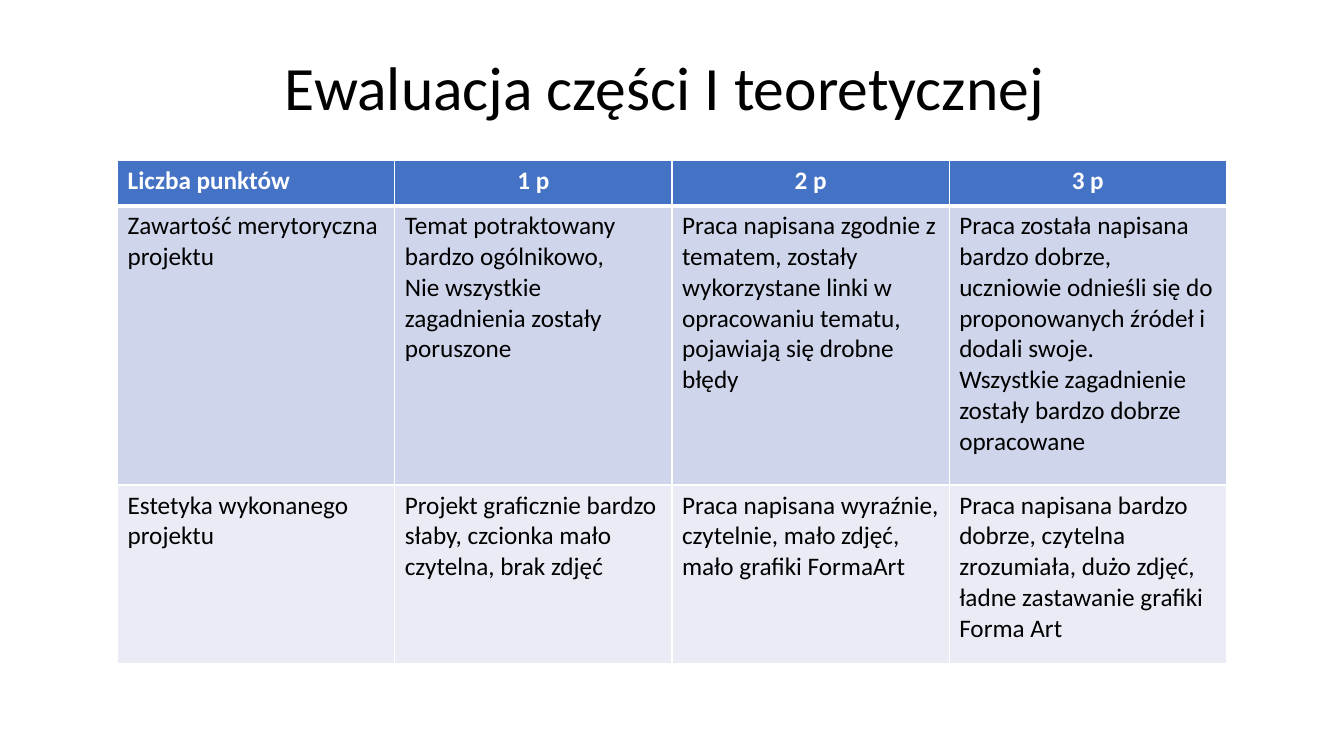
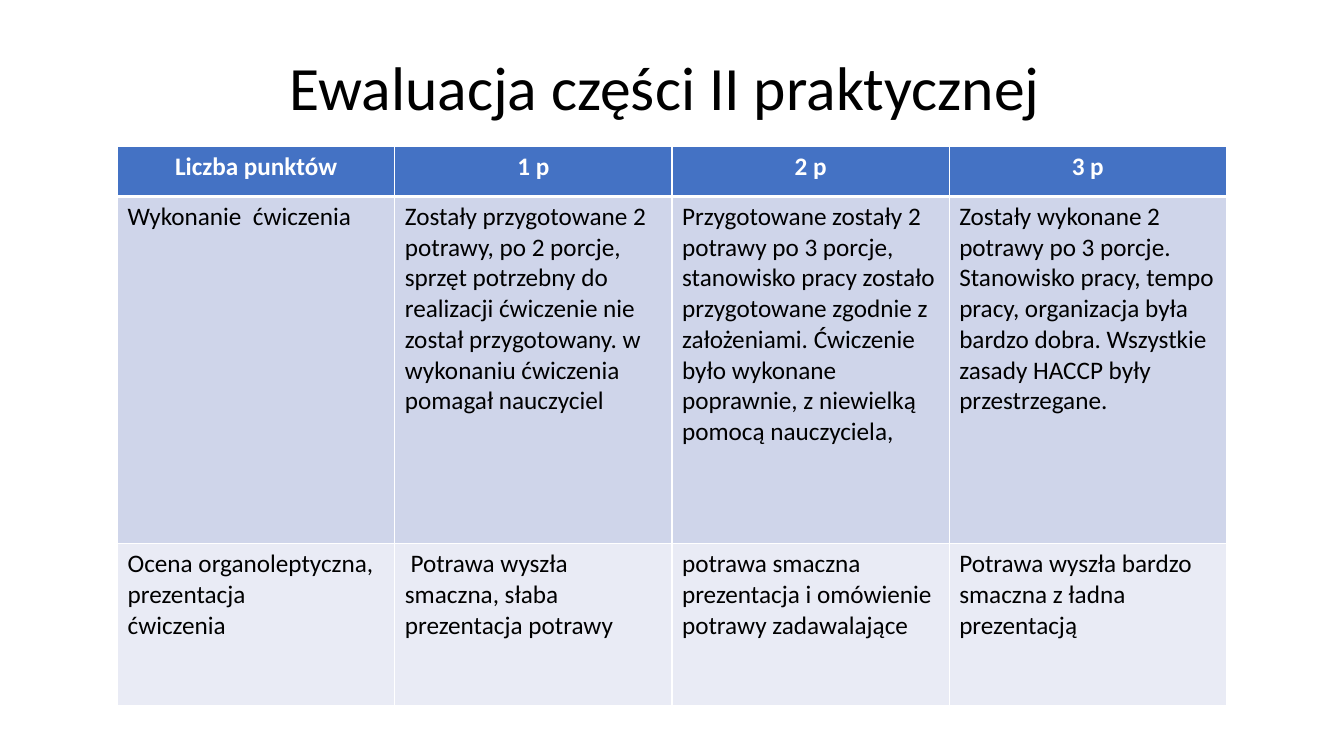
from lxml.etree import SubElement
from pptx import Presentation
from pptx.dml.color import RGBColor
from pptx.enum.text import MSO_ANCHOR, MSO_AUTO_SIZE, PP_ALIGN
from pptx.oxml.ns import qn
from pptx.util import Emu, Pt

EMU_PER_PX = 9525
FONT = "Calibri"
WHITE = RGBColor(0xFF, 0xFF, 0xFF)
BLACK = RGBColor(0, 0, 0)
HEADER_BLUE = RGBColor(0x44, 0x72, 0xC4)
ROW_FILLS = (HEADER_BLUE, RGBColor(0xCF, 0xD5, 0xEA), RGBColor(0xE9, 0xEB, 0xF5))
THIN, THICK = Pt(1), Pt(3)

LEFT, WIDTH = 112, 1056
TITLE_BOX = (LEFT, 48, WIDTH, 76)
POINTS = ("1 p", "2 p", "3 p")

EVALUATIONS = (
    {
        "title": "Ewaluacja części I teoretycznej ",
        "top": 153,
        "heights": (43, 266, 170),
        "corner_align": PP_ALIGN.LEFT,
        "criteria": (
            (
                "Zawartość merytoryczna projektu",
                "Temat potraktowany bardzo ogólnikowo,\n"
                "Nie wszystkie zagadnienia zostały poruszone",
                "Praca napisana zgodnie z tematem, zostały wykorzystane linki "
                "w opracowaniu tematu, pojawiają się drobne błędy",
                "Praca została napisana bardzo dobrze, uczniowie odnieśli się do "
                "proponowanych źródeł i dodali swoje.\n"
                "Wszystkie zagadnienie zostały bardzo dobrze opracowane",
            ),
            (
                "Estetyka wykonanego projektu",
                "Projekt graficznie bardzo słaby, czcionka mało czytelna, brak zdjęć",
                "Praca napisana wyraźnie, czytelnie, mało zdjęć, mało grafiki FormaArt",
                "Praca napisana bardzo dobrze, czytelna zrozumiała, dużo zdjęć, "
                "ładne zastawanie grafiki Forma Art",
            ),
        ),
    },
    {
        "title": "Ewaluacja części II praktycznej ",
        "top": 139,
        "heights": (48, 331, 154),
        "corner_align": PP_ALIGN.CENTER,
        "criteria": (
            (
                "Wykonanie  ćwiczenia",
                "Zostały przygotowane 2 potrawy, po 2 porcje, sprzęt potrzebny do "
                "realizacji ćwiczenie nie został przygotowany. w wykonaniu "
                "ćwiczenia pomagał nauczyciel",
                "Przygotowane zostały 2 potrawy po 3 porcje, stanowisko pracy zostało "
                "przygotowane zgodnie z założeniami. Ćwiczenie było wykonane "
                "poprawnie, z niewielką pomocą nauczyciela,",
                "Zostały wykonane 2 potrawy po 3 porcje. Stanowisko pracy, tempo "
                "pracy, organizacja była bardzo dobra. Wszystkie zasady HACCP "
                "były przestrzegane.",
            ),
            (
                "Ocena organoleptyczna,\nprezentacja\nćwiczenia",
                " Potrawa wyszła smaczna, słaba prezentacja potrawy",
                "potrawa smaczna prezentacja i omówienie potrawy zadawalające",
                "Potrawa wyszła bardzo smaczna z ładna prezentacją",
            ),
        ),
    },
)


def px(length):
    """Turn pixels into EMU."""
    return Emu(length * EMU_PER_PX)


def style_text(frame, size, color, align, bold=False):
    """Format every paragraph and run of a text frame."""
    for paragraph in frame.paragraphs:
        paragraph.alignment = align
        for run in paragraph.runs:
            run.font.name = FONT
            run.font.size = Pt(size)
            run.font.bold = bold
            run.font.color.rgb = color


def set_borders(cell, top, bottom):
    """Draw white cell borders ahead of the cell fill."""
    properties = cell._tc.get_or_add_tcPr()
    sides = (("lnL", THIN), ("lnR", THIN), ("lnT", top), ("lnB", bottom))
    for position, (side, weight) in enumerate(sides):
        border = SubElement(properties, qn(f"a:{side}"), w=str(int(weight)))
        fill = SubElement(border, qn("a:solidFill"))
        SubElement(fill, qn("a:srgbClr"), val=str(WHITE))
        properties.insert(position, border)


def add_title(slide, text, box):
    """Place and format the slide title."""
    title = slide.shapes.title
    title.left, title.top, title.width, title.height = map(px, box)
    frame = title.text_frame
    frame.text = text
    frame.word_wrap = True
    frame.auto_size = MSO_AUTO_SIZE.NONE
    frame.vertical_anchor = MSO_ANCHOR.MIDDLE
    frame.paragraphs[0].line_spacing = 0.9
    style_text(frame, 44, BLACK, PP_ALIGN.CENTER)


def add_rubric(slide, rows, heights, corner_align, box):
    """Place the scoring table with equal columns."""
    columns = len(rows[0])
    rubric = slide.shapes.add_table(len(rows), columns, *map(px, box)).table
    for column in rubric.columns:
        column.width = px(box[2] // columns)
    for r, (texts, height, fill) in enumerate(zip(rows, heights, ROW_FILLS)):
        rubric.rows[r].height = px(height)
        header = r == 0
        for c, text in enumerate(texts):
            cell = rubric.cell(r, c)
            cell.text_frame.text = text
            cell.fill.solid()
            cell.fill.fore_color.rgb = fill
            align = PP_ALIGN.CENTER if header else PP_ALIGN.LEFT
            if header and c == 0:
                align = corner_align
            style_text(cell.text_frame, 18, WHITE if header else BLACK, align, header)
            set_borders(cell, THICK if r == 1 else THIN, THICK if header else THIN)


def add_evaluation(deck, evaluation):
    """Build one evaluation slide."""
    slide = deck.slides.add_slide(deck.slide_layouts.get_by_name("Title Only"))
    add_title(slide, evaluation["title"], TITLE_BOX)
    heights = evaluation["heights"]
    rows = (("Liczba punktów", *POINTS), *evaluation["criteria"])
    box = (LEFT, evaluation["top"], WIDTH, sum(heights))
    add_rubric(slide, rows, heights, evaluation["corner_align"], box)


def main():
    """Build and save the deck."""
    deck = Presentation()
    deck.slide_width, deck.slide_height = px(1280), px(720)
    for evaluation in EVALUATIONS:
        add_evaluation(deck, evaluation)
    deck.save("out.pptx")


if __name__ == "__main__":
    main()
